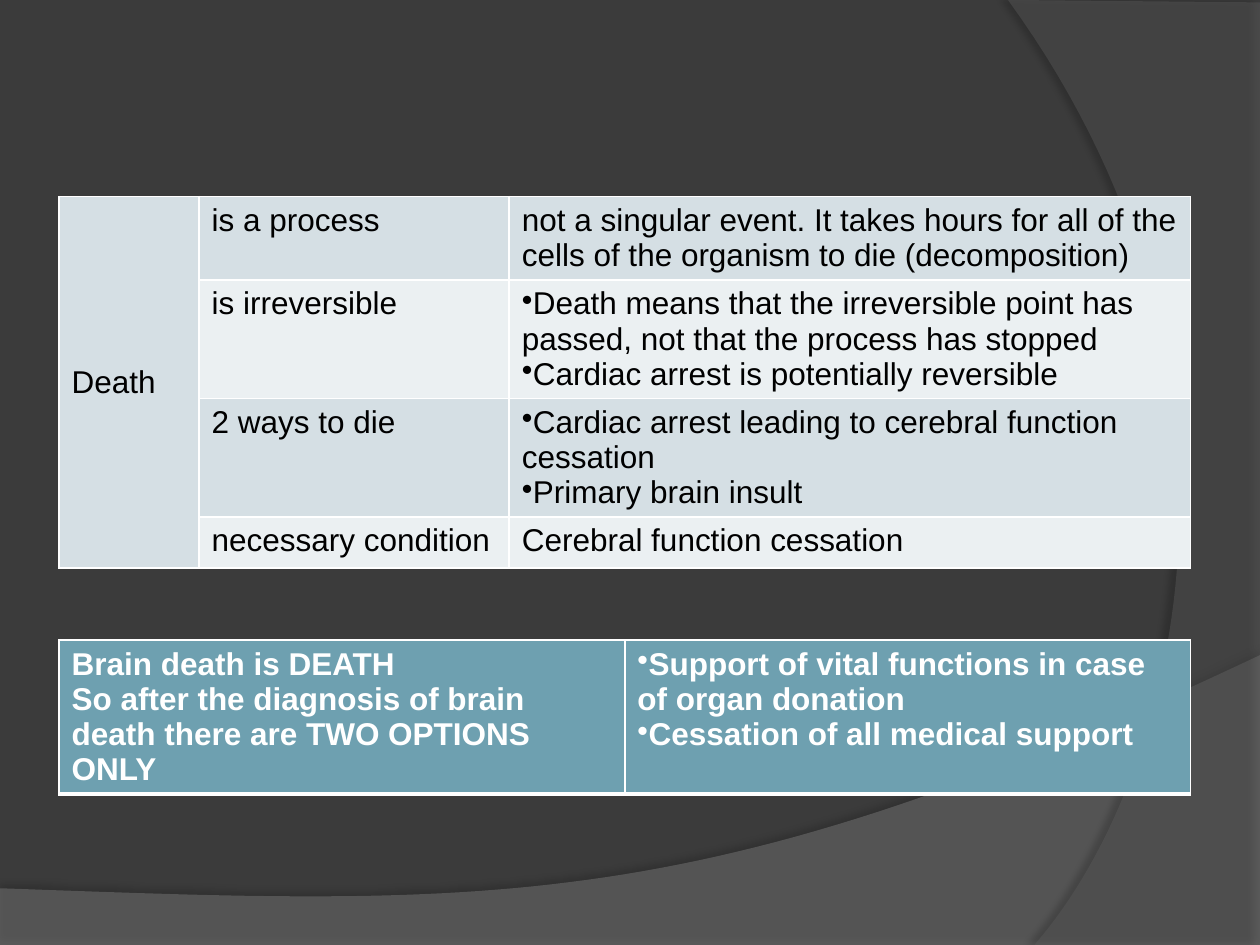
from lxml import etree
from pptx import Presentation, util as u
from pptx.dml.color import RGBColor
from pptx.enum import text
from pptx.oxml import ns

HUE = dict(back="3B3B3B", wave="7F7F7F", arc="5E5E5E", dark="D5DFE4",
           light="EBF0F2", teal="6EA0B0", black="000000", white="FFFFFF")


def rgb(name):
    return RGBColor.from_string(HUE[name])


def add(node, tag, **attrs):
    return etree.SubElement(node, ns.qn("a:" + tag), {k: str(v) for k, v in attrs.items()})


def curve(a, b, c, d, steps=60):
    for i in range(1, steps + 1):
        t = i / steps
        s = 1 - t
        yield tuple(s**3 * p + 3 * s * s * t * q + 3 * s * t * t * r + t**3 * e
                    for p, q, r, e in zip(a, b, c, d))


class Deck:
    """Holds the style and the current slide."""

    font = dict(name="Arial", size=u.Pt(18), bold=False)

    def __init__(self):
        self.prs = Presentation()
        self.prs.slide_width, self.prs.slide_height = u.Pt(720), u.Pt(540)
        self.slide = self.prs.slides.add_slide(self.prs.slide_layouts[6])
        fill = self.slide.background.fill
        fill.solid()
        fill.fore_color.rgb = rgb("back")

    def swoosh(self, pts, hue, alpha, shade, dist, angle):
        pts = [(u.Pt(x), u.Pt(y)) for x, y in pts]
        form = self.slide.shapes.build_freeform(*pts[0])
        form.add_line_segments(pts[1:], close=True)
        shape = form.convert_to_shape()
        shape.fill.solid()
        shape.fill.fore_color.rgb = rgb(hue)
        color = shape.fill._xPr.find(".//" + ns.qn("a:srgbClr"))
        add(color, "alpha", val=alpha * 1000)
        shape.line.fill.background()
        shape.shadow.inherit = False
        glow = add(shape.element.spPr.find(ns.qn("a:effectLst")), "outerShdw",
                   blurRad=u.Pt(4), dist=u.Pt(dist), dir=angle * 60000, rotWithShape=0)
        add(add(glow, "srgbClr", val=HUE["black"]), "alpha", val=shade * 1000)

    def cell(self, cell, paras, fill, ink, base=1, bold=False):
        props = cell._tc.get_or_add_tcPr()
        for side, width in zip("LRTB", (1, 1, 1, base)):
            line = add(props, "ln" + side, w=u.Pt(width))
            add(add(line, "solidFill"), "srgbClr", val=HUE["white"])
        cell.fill.solid()
        cell.fill.fore_color.rgb = rgb(fill)
        frame = cell.text_frame
        for i, words in enumerate(paras):
            para = frame.add_paragraph() if i else frame.paragraphs[0]
            if words.startswith("•"):
                props = para._p.get_or_add_pPr()
                props.set("marL", "0")
                props.set("indent", "0")
                add(props, "buChar", char="•")
            run = para.add_run()
            run.text = words.lstrip("•")
            for key, val in {**self.font, "bold": bold}.items():
                setattr(run.font, key, val)
            run.font.color.rgb = rgb(ink)

    def table(self, top, height, cols, rows, fills, ink, **style):
        step = 29.2
        frame = self.slide.shapes.add_table(len(rows), len(cols), u.Pt(33.8), u.Pt(top),
                                            u.Pt(sum(cols)), u.Pt(step * len(rows)))
        grid = frame.table
        grid.first_row = grid.horz_banding = False
        for col, width in zip(grid.columns, cols):
            col.width = u.Pt(width)
        for r, row in enumerate(rows):
            for c, paras in enumerate(row):
                self.cell(grid.cell(r, c), paras, fills[r % len(fills)], ink, **style)
        frame.height = u.Pt(height)
        return grid


def main():
    deck = Deck()
    wave = [(0, 507.6), (0, 540), (720, 540), (720, 374.4)]
    wave += curve(wave[-1], (402.5, 524.9), (281.5, 517.7), wave[0])
    deck.swoosh(wave, "wave", 45, 35, 3.5, 270)
    arc = [(720, 1.4), (720, 540), (591.1, 540)]
    arc += curve(arc[-1], (673.2, 445.7), (733, 216), (576, 0))
    deck.swoosh(arc, "arc", 40, 45, 4, 180)

    facts = [
        (["Death"], ["is a process"],
         ["not a singular event. It takes hours for all of the cells of the organism to die (decomposition)"]),
        ([], ["is irreversible"],
         ["•Death means that the irreversible point has passed, not that the process has stopped",
          "•Cardiac arrest is potentially reversible"]),
        ([], ["2 ways to die"],
         ["•Cardiac arrest leading to cerebral function cessation", "•Primary brain insult"]),
        ([], ["necessary condition"], ["Cerebral function cessation"]),
    ]
    grid = deck.table(112.4, 223.9, (80, 177.2, 389.4), facts, ("dark", "light"), "black")
    head = grid.cell(0, 0)
    head.merge(grid.cell(3, 0))
    head.vertical_anchor = text.MSO_ANCHOR.MIDDLE
    head.text_frame.paragraphs[0].alignment = text.PP_ALIGN.JUSTIFY

    choice = [(["Brain death is DEATH",
                "So after the diagnosis of brain death there are TWO OPTIONS ONLY"],
               ["•Support of vital functions in case of organ donation",
                "•Cessation of all medical support"])]
    deck.table(365.8, 93.6, (323.3, 323.3), choice, ("teal",), "white", base=3, bold=True)
    deck.prs.save("out.pptx")


if __name__ == "__main__":
    main()
